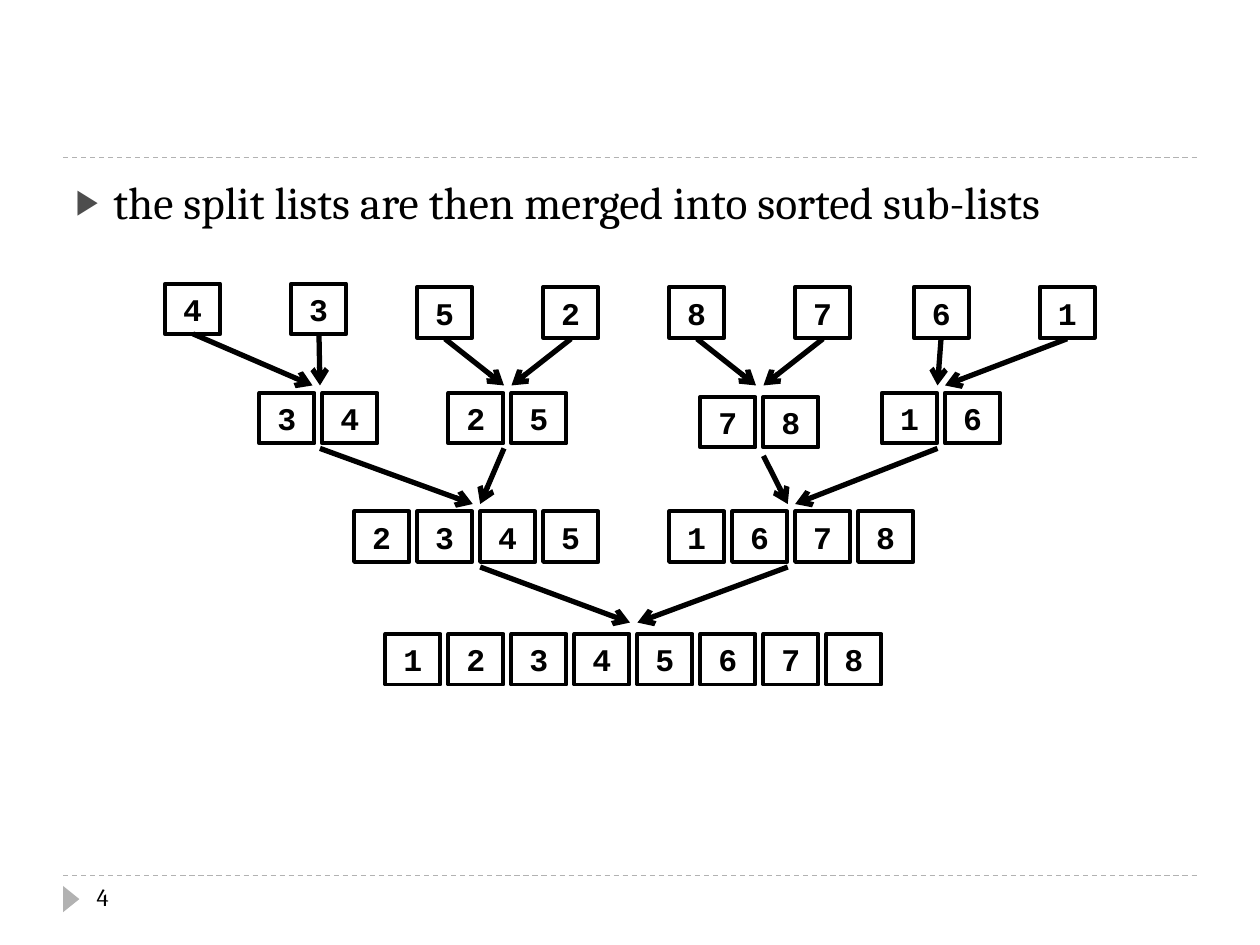
import pptx
import pptx.util
import pptx.dml.color
import pptx.enum.dml
import pptx.enum.shapes
import pptx.enum.text
import pptx.oxml
import pptx.oxml.ns
from pptx.util import Cm

SHAPE = pptx.enum.shapes.MSO_SHAPE
NS = pptx.oxml.ns.nsdecls("a")


def color(hex_value):
    return pptx.dml.color.RGBColor.from_string(hex_value)


def write(tf, text, font="Cambria", size=14, fill="000000", bold=False, align="LEFT"):
    p = tf.paragraphs[0]
    p.alignment = getattr(pptx.enum.text.PP_ALIGN, align)
    r = p.add_run()
    r.text = text
    r.font.name = font
    r.font.size = pptx.util.Pt(size)
    r.font.bold = bold
    r.font.color.rgb = color(fill)
    return p


class MergeSlide:
    ink, rule_gray, bullet_gray = "000000", "B2B2B2", "4D4D4D"
    box_w, box_h = 1.11, 1.02

    def __init__(self, prs):
        self.s = prs.slides.add_slide(prs.slide_layouts[1])
        title = self.s.shapes.title
        title.element.getparent().remove(title.element)

    def line(self, x1, y1, x2, y2, stroke, width):
        c = self.s.shapes.add_connector(
            pptx.enum.shapes.MSO_CONNECTOR.STRAIGHT, Cm(x1), Cm(y1), Cm(x2), Cm(y2))
        c.line.color.rgb = color(stroke)
        c.line.width = pptx.util.Pt(width)
        c.element.spPr.append(pptx.oxml.parse_xml(f"<a:effectLst {NS}/>"))
        return c

    def rule(self, y):
        c = self.line(1.27, y, 24.13, y, self.rule_gray, 0.75)
        c.line.dash_style = pptx.enum.dml.MSO_LINE.DASH

    def arrow(self, x1, y1, x2, y2):
        c = self.line(x1, y1, x2, y2, self.ink, 3)
        c.line._get_or_add_ln().append(
            pptx.oxml.parse_xml(f'<a:tailEnd {NS} type="arrow"/>'))

    def marker(self, x, y, w, h):
        sp = self.s.shapes.add_shape(SHAPE.ISOSCELES_TRIANGLE, Cm(x), Cm(y), Cm(w), Cm(h))
        sp.rotation = 90
        sp.shadow.inherit = False
        sp.fill.solid()
        sp.fill.fore_color.rgb = color(self.rule_gray)
        sp.line.fill.background()

    def label(self, text, x, y, w, h):
        tf = self.s.shapes.add_textbox(Cm(x), Cm(y), Cm(w), Cm(h)).text_frame
        tf.word_wrap = True
        write(tf, text)

    def bullet(self, text, x, y, w, h):
        sp = self.s.placeholders[1]
        sp.left, sp.top, sp.width, sp.height = Cm(x), Cm(y), Cm(w), Cm(h)
        p = write(sp.text_frame, text, size=26)
        p.space_before = pptx.util.Pt(6)
        pPr = p._p.get_or_add_pPr()
        pPr.set("marL", str(Cm(0.76)))
        pPr.set("indent", str(-Cm(0.76)))
        for xml in (f'<a:buClr {NS}><a:srgbClr val="{self.bullet_gray}"/></a:buClr>',
                    f'<a:buSzPct {NS} val="76000"/>',
                    f'<a:buChar {NS} char="▶"/>'):
            pPr.append(pptx.oxml.parse_xml(xml))

    def boxes(self, digits, x, y, pitch=1.27):
        for i, digit in enumerate(digits):
            sp = self.s.shapes.add_shape(
                SHAPE.RECTANGLE, Cm(x + i * pitch), Cm(y), Cm(self.box_w), Cm(self.box_h))
            sp.shadow.inherit = False
            sp.fill.background()
            sp.line.color.rgb = color(self.ink)
            sp.line.width = pptx.util.Pt(2.25)
            tf = sp.text_frame
            tf.word_wrap = False
            tf.vertical_anchor = pptx.enum.text.MSO_ANCHOR.MIDDLE
            write(tf, digit, font="Courier New", size=18, bold=True, align="CENTER")


def main():
    prs = pptx.Presentation()
    prs.slide_width, prs.slide_height = Cm(25.4), Cm(19.05)
    slide = MergeSlide(prs)

    # Frame and text
    slide.rule(17.65)
    slide.rule(3.18)
    slide.marker(1.17, 17.96, 0.53, 0.33)
    slide.bullet("the split lists are then merged into sorted sub-lists",
                 1.27, 3.38, 22.86, 13.72)
    slide.label("4", 1.7, 17.65, 5.51, 1.02)

    # Single items, in pairs
    for digits, x, y in (("43", 3.33, 5.72), ("52", 8.41, 5.79),
                         ("87", 13.49, 5.79), ("61", 18.42, 5.79)):
        slide.boxes(digits, x, y, pitch=2.54)

    # Merged lists
    for digits, x, y in (("34", 5.23, 7.92), ("25", 9.04, 7.92),
                         ("78", 14.12, 8), ("16", 17.78, 7.92),
                         ("2345", 7.14, 10.31), ("1678", 13.49, 10.31),
                         ("12345678", 7.77, 12.78)):
        slide.boxes(digits, x, y)

    # Arrows of each merge step: end height, then (x1, y1, x2)
    steps = (
        (7.77, ((3.89, 6.73, 6.3), (6.43, 6.73, 6.45),
                (8.97, 6.83, 10.16), (11.51, 6.83, 10.31),
                (14.05, 6.83, 15.24), (16.59, 6.83, 15.39),
                (18.97, 6.83, 18.9), (21.51, 6.83, 19.05))),
        (10.16, ((6.45, 9.04, 9.53), (10.16, 9.04, 9.68),
                 (15.39, 9.19, 15.88), (18.9, 9.04, 16.03))),
        (12.55, ((9.68, 11.43, 12.7), (15.88, 11.43, 12.85))),
    )
    for y2, arrows in steps:
        for x1, y1, x2 in arrows:
            slide.arrow(x1, y1, x2, y2)

    prs.save("out.pptx")


if __name__ == "__main__":
    main()
